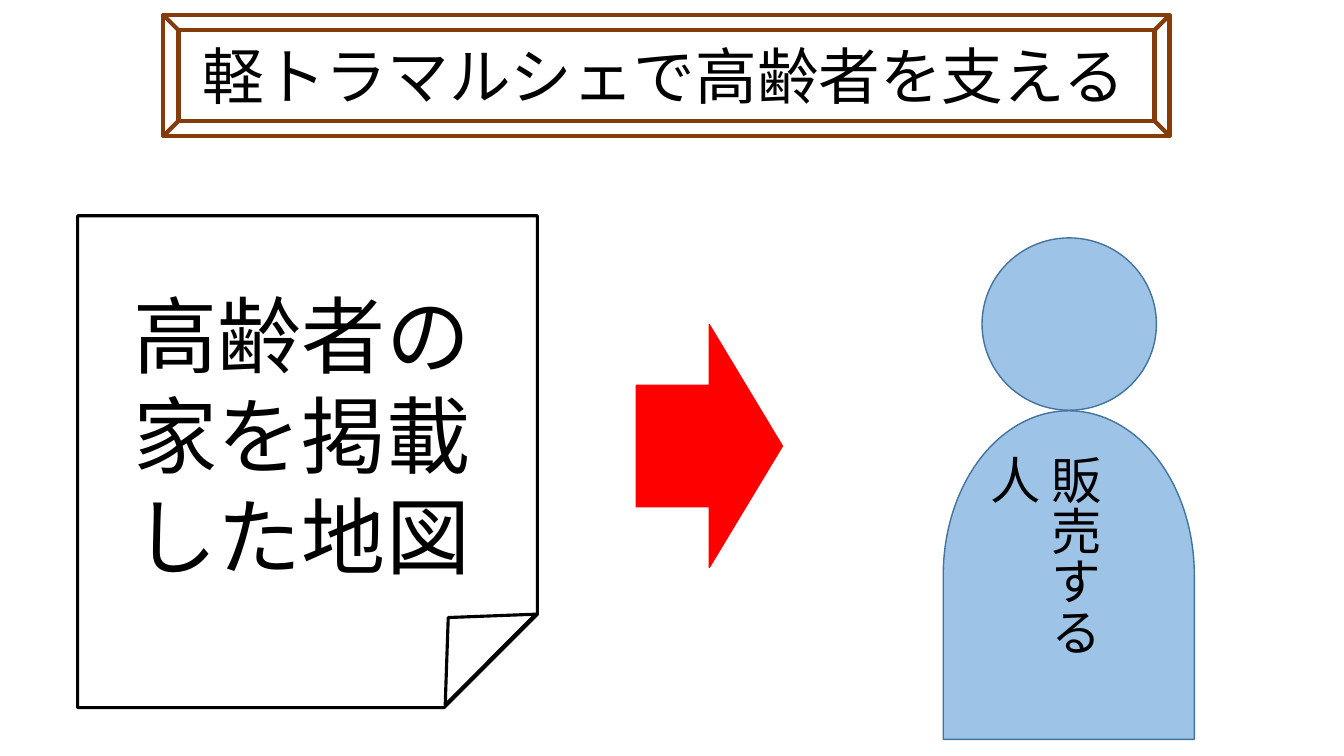
from pptx import Presentation
from pptx.dml.color import RGBColor
from pptx.enum.shapes import MSO_SHAPE
from pptx.enum.text import MSO_ANCHOR, MSO_AUTO_SIZE, PP_ALIGN
from pptx.oxml.ns import qn
from pptx.util import Inches, Pt
from lxml.etree import SubElement

BLACK = RGBColor(0x00, 0x00, 0x00)
BROWN = RGBColor(0x84, 0x3C, 0x0B)
RED = RGBColor(0xFF, 0x00, 0x00)
LIGHT_BLUE = RGBColor(0x9D, 0xC3, 0xE6)
DARK_BLUE = RGBColor(0x43, 0x73, 0x9E)


class SlideBuilder:
    font = "Noto Sans CJK JP"

    def __init__(self, slide):
        self.slide = slide

    def place(self, element, box):
        element.left, element.top, element.width, element.height = map(Inches, box)

    def add_words(self, element, words, size):
        frame = element.text_frame
        frame.word_wrap = True
        frame.auto_size = MSO_AUTO_SIZE.SHAPE_TO_FIT_TEXT
        frame.vertical_anchor = MSO_ANCHOR.TOP
        paragraph = frame.paragraphs[0]
        paragraph.alignment = PP_ALIGN.LEFT
        run = paragraph.add_run()
        run.text = words
        run.font.size = Pt(size)
        run.font.name = self.font
        run.font.color.rgb = BLACK
        SubElement(run.font._element, qn("a:ea"), typeface=self.font)

    def title(self, box, words, size):
        heading = self.slide.shapes.title
        self.place(heading, box)
        self.add_words(heading, words, size)

    def label(self, box, words, size, vertical=False):
        caption = self.slide.shapes.add_textbox(*map(Inches, box))
        self.add_words(caption, words, size)
        if vertical:
            caption.text_frame._txBody.bodyPr.set("vert", "eaVert")

    def shape(self, preset, box, line, weight, fill=None, rotation=0):
        figure = self.slide.shapes.add_shape(preset, *map(Inches, box))
        figure.shadow.inherit = False
        figure.rotation = rotation
        if fill is None:
            figure.fill.background()
        else:
            figure.fill.solid()
            figure.fill.fore_color.rgb = fill
        figure.line.color.rgb = line
        figure.line.width = Pt(weight)
        return figure


def main():
    deck = Presentation()
    deck.slide_width = Inches(13.33)
    deck.slide_height = Inches(7.5)
    page = SlideBuilder(deck.slides.add_slide(deck.slide_layouts[5]))

    page.title((1.91, 0.33, 11.71, 0.84), "軽トラマルシェで高齢者を支える", 44)
    page.shape(MSO_SHAPE.BEVEL, (1.62, 0.15, 9.98, 1.2), BROWN, 3)

    map_sheet = page.shape(MSO_SHAPE.SNIP_1_RECTANGLE, (0.61, 2.3, 4.88, 4.56),
                           BLACK, 2.25, rotation=90)
    map_sheet.adjustments[0] = 0.203
    page.shape(MSO_SHAPE.FLOWCHART_EXTRACT, (4.02, 6.04, 1.27, 0.59),
               BLACK, 2.25, rotation=314.9)
    page.label((1.23, 2.76, 3.59, 3.13), "高齢者の家を掲載した地図", 60)

    page.shape(MSO_SHAPE.DOWN_ARROW, (5.83, 3.7, 2.41, 1.45), RED, 1, RED, 270)

    page.shape(MSO_SHAPE.OVAL, (9.74, 2.36, 1.73, 1.71), DARK_BLUE, 1, LIGHT_BLUE)
    page.shape(MSO_SHAPE.FLOWCHART_DELAY, (8.97, 4.46, 3.26, 2.49),
               DARK_BLUE, 1, LIGHT_BLUE, 270)
    page.label((10.2, 4.42, 0.81, 2.65), "販売する人", 36, vertical=True)

    deck.save("out.pptx")


if __name__ == "__main__":
    main()
